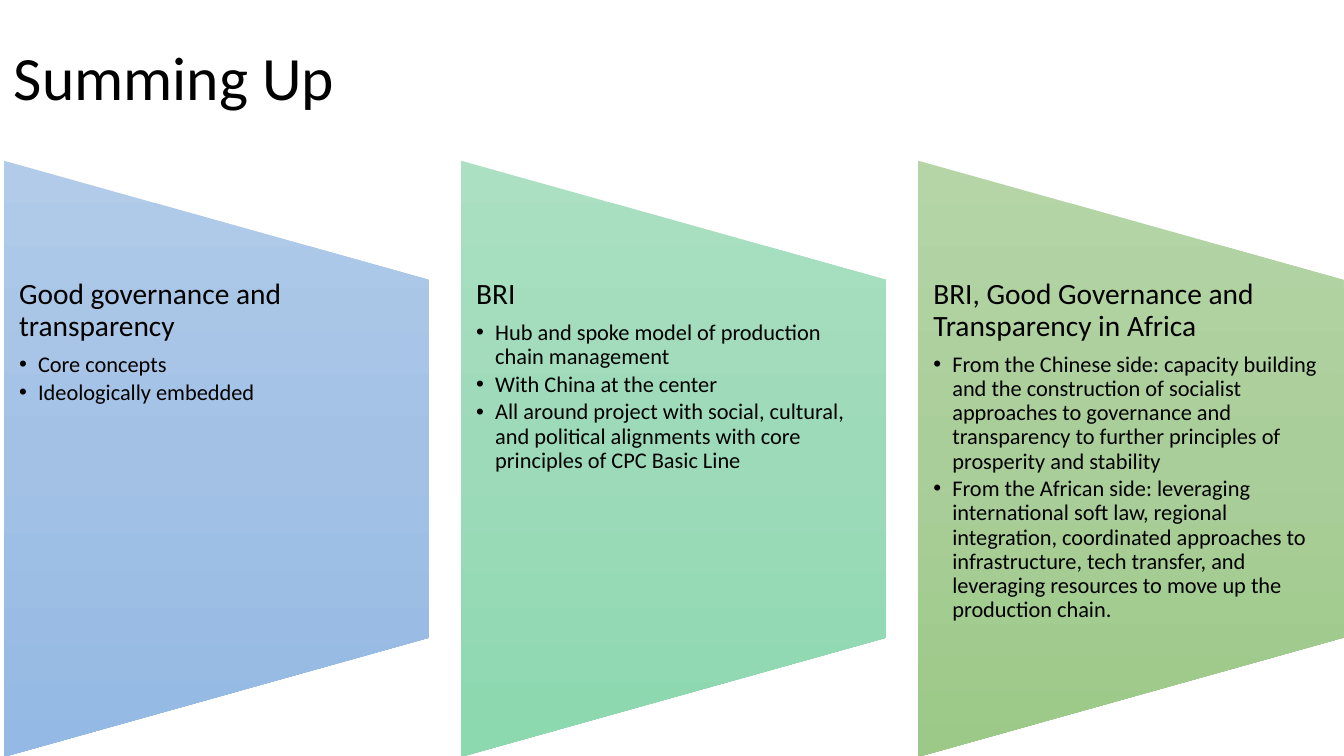
from dataclasses import dataclass

from lxml.etree import SubElement
from pptx import Presentation
from pptx.dml.color import RGBColor
from pptx.enum.shapes import MSO_SHAPE
from pptx.enum.text import MSO_ANCHOR, MSO_AUTO_SIZE, PP_ALIGN
from pptx.oxml import parse_xml
from pptx.oxml.ns import nsdecls, qn
from pptx.util import Cm, Pt


@dataclass(frozen=True)
class Theme:
    font: str = "Calibri"
    text: str = "000000"
    title_size: int = 44
    heading_size: int = 21
    bullet_size: int = 16
    blue: tuple = ("B1CBE9", "A3C1E5", "93B9E4")
    teal: tuple = ("ABE0C3", "9DDAB9", "8CD8AF")
    green: tuple = ("B5D5A7", "AACE9A", "9CC987")


class SlideBuilder:
    def __init__(self, prs, theme):
        self.theme = theme
        self.slide = prs.slides.add_slide(prs.slide_layouts.get_by_name("Comparison"))

    def place(self, sp, left, top, width, height, inset, anchor):
        sp.left, sp.top, sp.width, sp.height = map(Cm, (left, top, width, height))
        tf = sp.text_frame
        tf.word_wrap = True
        tf.auto_size = MSO_AUTO_SIZE.NONE
        tf.vertical_anchor = anchor
        tf.margin_left = tf.margin_right = Cm(inset)
        tf.margin_top = tf.margin_bottom = 0
        return tf

    def format(self, p, size, after=0):
        p.alignment = PP_ALIGN.LEFT
        p.line_spacing = 0.9
        p.space_before = Pt(0)
        p.space_after = Pt(after)
        for r in p.runs:
            r.font.name = self.theme.font
            r.font.size = Pt(size)
            r.font.bold = False
            r.font.color.rgb = RGBColor.from_string(self.theme.text)

    def bullet(self, p, char=None, indent=0.0):
        pPr = p._p.get_or_add_pPr()
        pPr.set("marL", str(Cm(indent)))
        pPr.set("indent", str(-Cm(indent)))
        if char:
            SubElement(pPr, qn("a:buFont")).set("typeface", "Arial")
            SubElement(pPr, qn("a:buChar")).set("char", char)
        else:
            SubElement(pPr, qn("a:buNone"))

    def title(self, text, left, top, width, height):
        tf = self.place(self.slide.shapes.title, left, top, width, height, 0.25, MSO_ANCHOR.MIDDLE)
        tf.text = text
        self.format(tf.paragraphs[0], self.theme.title_size)

    def panel(self, body, left, top, width, height, colors):
        sp = self.slide.shapes.add_shape(
            MSO_SHAPE.FLOWCHART_MANUAL_OPERATION,
            Cm(left + (width - height) / 2), Cm(top + (height - width) / 2),
            Cm(height), Cm(width))
        sp.rotation = 270
        sp.shadow.inherit = False
        sp.line.fill.background()
        sp.fill.background()
        stops = "".join(
            f'<a:gs pos="{i * 50000}"><a:srgbClr val="{color}"/></a:gs>'
            for i, color in enumerate(colors))
        spPr = sp.element.spPr
        spPr.replace(spPr.find(qn("a:noFill")), parse_xml(
            f'<a:gradFill {nsdecls("a")} rotWithShape="0"><a:gsLst>{stops}</a:gsLst>'
            '<a:lin ang="5400000" scaled="0"/></a:gradFill>'))
        body.element.addprevious(sp.element)

    def body(self, sp, left, top, width, height, heading, bullets):
        tf = self.place(sp, left, top, width, height, 0.38, MSO_ANCHOR.TOP)
        p = tf.paragraphs[0]
        p.text = heading
        self.bullet(p)
        self.format(p, self.theme.heading_size, 7.35)
        for text in bullets:
            p = tf.add_paragraph()
            p.text = text
            p.level = 1
            self.bullet(p, "•", 0.48)
            self.format(p, self.theme.bullet_size, 2.4)


def main():
    prs = Presentation()
    prs.slide_width, prs.slide_height = Cm(33.87), Cm(19.05)
    theme = Theme()
    s = SlideBuilder(prs, theme)
    s.title("Summing Up", 0.1, 0.18, 29.21, 3.68)

    columns = [
        (theme.blue, "Good governance and transparency",
         ["Core concepts", "Ideologically embedded"]),
        (theme.teal, "BRI",
         ["Hub and spoke model of production chain management",
          "With China at the center",
          "All around project with social, cultural, and political alignments "
          "with core principles of CPC Basic Line"]),
        (theme.green, "BRI, Good Governance and Transparency in Africa",
         ["From the Chinese side: capacity building and the construction of socialist "
          "approaches to governance and transparency to further principles of "
          "prosperity and stability",
          "From the African side: leveraging international soft law, regional "
          "integration, coordinated approaches to infrastructure, tech transfer, and "
          "leveraging resources to move up the production chain."]),
    ]
    left, step, width = 0.1, 11.52, 10.72
    bodies = list(s.slide.placeholders)[1:]
    for i, (sp, (colors, heading, bullets)) in enumerate(zip(bodies, columns)):
        x = left + i * step
        s.panel(sp, x, 4.05, width, 15.02, colors)
        s.body(sp, x, 7.04, width, 9.02, heading, bullets)
    for sp in bodies[len(columns):]:
        sp.element.getparent().remove(sp.element)

    prs.save("out.pptx")


if __name__ == "__main__":
    main()
